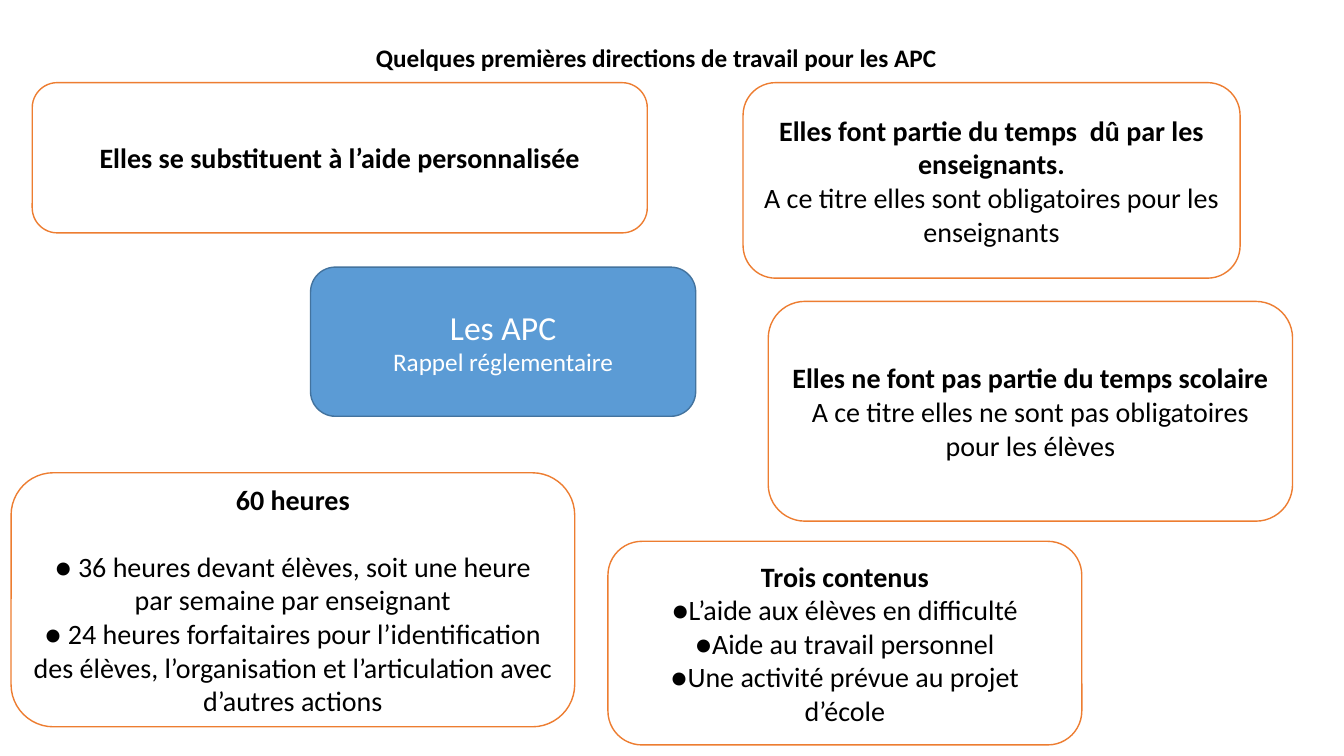
from pptx import Presentation
from pptx.dml.color import RGBColor
from pptx.enum.shapes import MSO_SHAPE
from pptx.enum.text import MSO_ANCHOR, MSO_AUTO_SIZE, PP_ALIGN
from pptx.util import Inches, Pt


def style(paragraph, size, color, bold=False):
    paragraph.alignment = PP_ALIGN.CENTER
    font = paragraph.font
    font.name, font.size, font.bold = "Calibri", Pt(size), bold
    font.color.rgb = RGBColor.from_string(color)


def add_box(position, fill, line, lines):
    """Add a rounded box; each line is (text, size, color, bold)."""
    box = slide.shapes.add_shape(MSO_SHAPE.ROUNDED_RECTANGLE, *map(Inches, position))
    box.shadow.inherit = False
    box.fill.solid()
    box.fill.fore_color.rgb = RGBColor.from_string(fill)
    box.line.color.rgb = RGBColor.from_string(line)
    box.line.width = Pt(1)
    frame = box.text_frame
    frame.word_wrap = True
    frame.vertical_anchor = MSO_ANCHOR.MIDDLE
    frame.text = "\n".join(text for text, *_ in lines)
    for paragraph, (_, *look) in zip(frame.paragraphs, lines):
        style(paragraph, *look)
    return box


prs = Presentation()
prs.slide_width, prs.slide_height = Inches(13.33), Inches(7.5)
slide = prs.slides.add_slide(prs.slide_layouts[5])

title = slide.shapes.title
title.left, title.top = Inches(0.73), Inches(0.37)
title.width, title.height = Inches(11.56), Inches(0.4)
title.text_frame.auto_size = MSO_AUTO_SIZE.NONE
title.text_frame.vertical_anchor = MSO_ANCHOR.TOP
title.text = "Quelques premières directions de travail pour les APC"
style(title.text_frame.paragraphs[0], 18, "000000", True)

add_box((3.08, 2.65, 3.82, 1.48), "5B9BD5", "43739E", [
    ("Les APC", 24, "FFFFFF"),
    ("Rappel réglementaire", 18, "FFFFFF"),
])

# Position, space after the heading in points, heading, details
rules = [
    ((6.03, 5.37, 4.7, 2.02), 0, "Trois contenus", [
        "●L’aide aux élèves en difficulté",
        "●Aide au travail personnel",
        "●Une activité prévue au projet d’école",
    ]),
    ((0.11, 4.69, 5.59, 2.52), 24, "60 heures", [
        "● 36 heures devant élèves, soit une heure par semaine par enseignant",
        "● 24 heures forfaitaires pour l’identification des élèves, "
        "l’organisation et l’articulation avec d’autres actions",
    ]),
    ((0.32, 0.82, 6.1, 1.49), 0, "Elles se substituent à l’aide personnalisée", []),
    ((7.37, 0.82, 4.93, 1.94), 0, "Elles font partie du temps  dû par les enseignants.", [
        "A ce titre elles sont obligatoires pour les enseignants",
    ]),
    ((7.62, 2.99, 5.2, 2.18), 0, "Elles ne font pas partie du temps scolaire", [
        "A ce titre elles ne sont pas obligatoires pour les élèves",
    ]),
]
for position, gap, heading, details in rules:
    lines = [(heading, 20, "000000", True)]
    lines += [(detail, 20, "000000") for detail in details]
    rule_box = add_box(position, "FFFFFF", "ED7D31", lines)
    rule_box.text_frame.paragraphs[0].space_after = Pt(gap)

prs.save("out.pptx")
